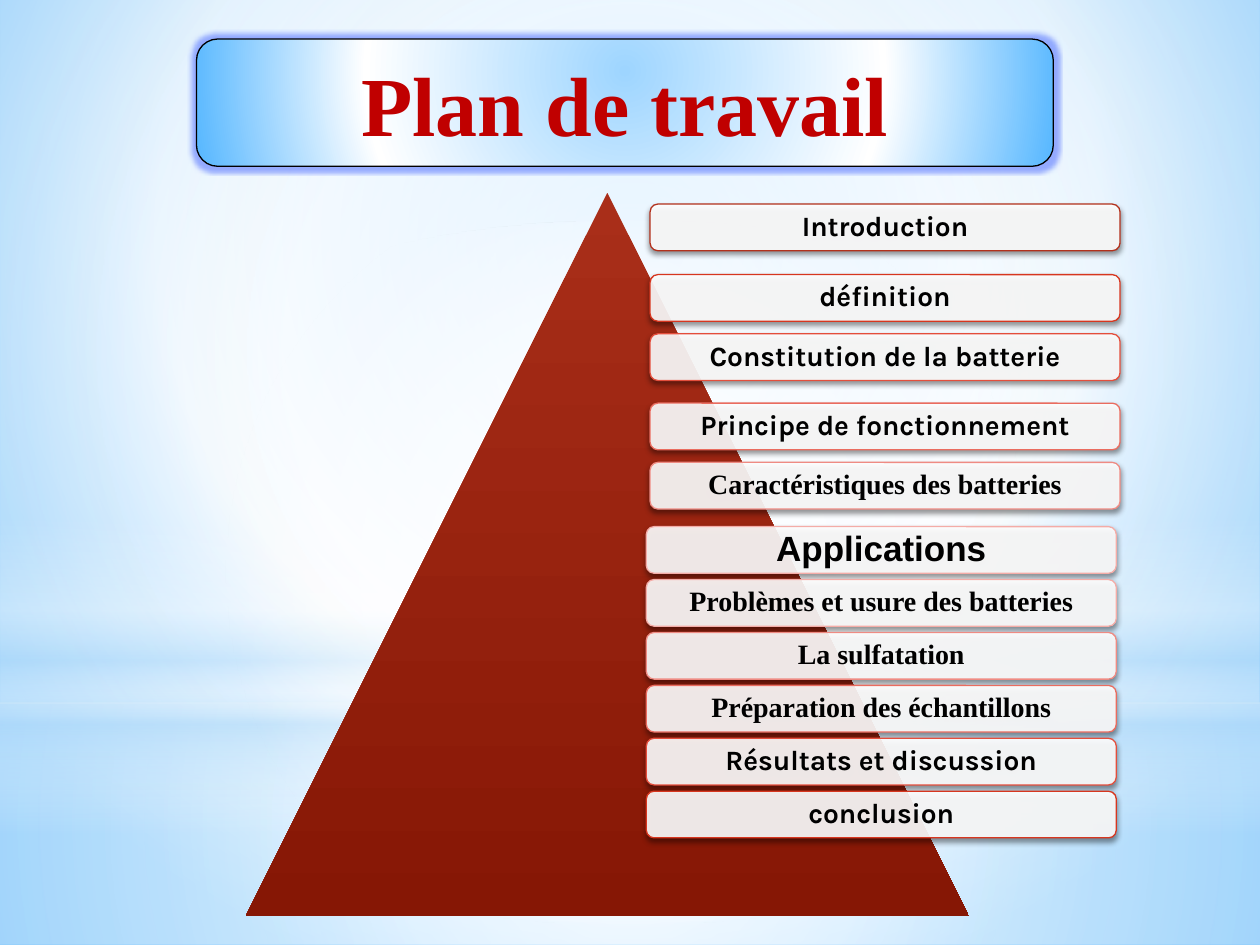
from lxml.etree import SubElement
from pptx import Presentation
from pptx.dml.color import RGBColor
from pptx.enum.shapes import MSO_SHAPE
from pptx.enum.text import MSO_ANCHOR, PP_ALIGN
from pptx.oxml.ns import qn
from pptx.util import Inches, Pt

BLACK = RGBColor(0x00, 0x00, 0x00)
WHITE = RGBColor(0xFF, 0xFF, 0xFF)
RED = RGBColor(0xC0, 0x00, 0x00)
GLOW = RGBColor(0x5A, 0x78, 0xFF)
SKY = RGBColor(0x9E, 0xD5, 0xFF)
BLUE = RGBColor(0x5B, 0xB9, 0xFF)
PALE = RGBColor(0xB4, 0xDC, 0xFA)
BRICK = RGBColor(0xA9, 0x2E, 0x19)
DARK = RGBColor(0x86, 0x17, 0x05)
EDGES = [RGBColor(0xB2, 0x30, 0x1B), RGBColor(0xD7, 0x36, 0x1F),
         RGBColor(0xE4, 0x4E, 0x3C), RGBColor(0xEA, 0x6C, 0x5F),
         RGBColor(0xEF, 0x8B, 0x83), RGBColor(0xF4, 0xAC, 0xA7)]

KARLA, TIMES, ARIAL = "Karla", "Times New Roman", "Arial"
MID = (50, 50, 50, 50)
HIGH = (20, 10, 20, 60)
SHEEN = [(0, SKY, 100), (60, WHITE, 100), (100, BLUE, 100)]

# Fill bands behind the content: shape, top, height, stops, focus (None = downward)
BANDS = [
    (MSO_SHAPE.RECTANGLE, 5.58, 1.92,
     [(0, WHITE, 91), (37, WHITE, 76), (100, PALE, 79)], MID),
    (MSO_SHAPE.RECTANGLE, 0, 5.58,
     [(0, WHITE, 89), (48, WHITE, 62), (100, PALE, 79)], MID),
    (MSO_SHAPE.RECTANGLE, 4.12, 2.5,
     [(0, WHITE, 0), (29, WHITE, 30), (45, PALE, 40), (55, WHITE, 26),
      (65, PALE, 60), (100, WHITE, 0)], None),
    (MSO_SHAPE.OVAL, 1.75, 5.58, [(0, WHITE, 100), (56, WHITE, 0)], MID),
]

# Text, top, font, for the two blocks of the plan
UPPER = [
    ("Introduction", 1.62, KARLA),
    ("définition", 2.18, KARLA),
    ("Constitution de la batterie", 2.65, KARLA),
    ("Principe de fonctionnement", 3.2, KARLA),
    ("Caractéristiques des batteries", 3.67, TIMES),
]
LOWER = [
    ("Applications", ARIAL),
    ("Problèmes et usure des batteries", TIMES),
    ("La sulfatation", TIMES),
    ("Préparation des échantillons", TIMES),
    ("Résultats et discussion", KARLA),
    ("conclusion", KARLA),
]


def add_tint(parent, color, alpha):
    tint = SubElement(parent, qn("a:srgbClr"), val=str(color))
    if alpha < 100:
        SubElement(tint, qn("a:alpha"), val=str(alpha * 1000))


def set_grad(fill, owner, stops, focus=None):
    """Gradient around a focus rectangle, or straight down without one."""
    fill.solid()
    old = owner.find(qn("a:solidFill"))
    grad = old.makeelement(qn("a:gradFill"), {"rotWithShape": "1"})
    owner.replace(old, grad)
    ramp = SubElement(grad, qn("a:gsLst"))
    for pos, color, alpha in stops:
        stop = SubElement(ramp, qn("a:gs"), pos=str(pos * 1000))
        add_tint(stop, color, alpha)
    if focus:
        route = SubElement(grad, qn("a:path"), {"path": "circle"})
        sides = {side: str(part * 1000) for side, part in zip("ltrb", focus)}
        SubElement(route, qn("a:fillToRect"), sides)
    else:
        SubElement(grad, qn("a:lin"), ang="5400000", scaled="0")


def add_shape(slide, kind, box, edge=None):
    shape = slide.shapes.add_shape(kind, *map(Inches, box))
    if edge is None:
        shape.line.fill.background()
    else:
        shape.line.color.rgb = edge
        shape.line.width = Pt(0.75)
    shape.shadow.inherit = False
    return shape


def add_effect(shape, tag, color, alpha, **sizes):
    effects = shape.element.spPr.find(qn("a:effectLst"))
    effect = SubElement(effects, qn(tag), {k: str(v) for k, v in sizes.items()})
    add_tint(effect, color, alpha)


def add_text(shape, text, font, size, color):
    frame = shape.text_frame
    frame.word_wrap = True
    frame.vertical_anchor = MSO_ANCHOR.MIDDLE
    para = frame.paragraphs[0]
    para.alignment = PP_ALIGN.CENTER
    run = para.add_run()
    run.text = text
    run.font.name = font
    run.font.size = Pt(size)
    run.font.bold = True
    run.font.color.rgb = color


def add_title(slide):
    shape = add_shape(slide, MSO_SHAPE.ROUNDED_RECTANGLE,
                      (1.56, 0.31, 6.8, 1.01), BLACK)
    set_grad(shape.fill, shape.element.spPr, SHEEN, HIGH)
    add_effect(shape, "a:glow", GLOW, 60, rad=Pt(5))
    add_text(shape, "Plan de travail", TIMES, 48, RED)


def add_item(slide, left, top, text, font, edge):
    shape = add_shape(slide, MSO_SHAPE.ROUNDED_RECTANGLE,
                      (left, top, 3.73, 0.37), edge)
    shape.fill.solid()
    shape.fill.fore_color.rgb = WHITE
    tint = shape.element.spPr.find(qn("a:solidFill"))[0]
    SubElement(tint, qn("a:alpha"), val="90000")
    add_effect(shape, "a:outerShdw", BLACK, 45, blurRad=Pt(3.1),
               dist=Pt(1.8), dir=5400000)
    add_text(shape, text, font, 20 if font == ARIAL else 16, BLACK)
    frame = shape.text_frame
    frame.margin_top = frame.margin_bottom = Inches(0.07)
    frame.paragraphs[0].line_spacing = 0.9


def main():
    deck = Presentation()
    deck.slide_width, deck.slide_height = Inches(10), Inches(7.5)
    slide = deck.slides.add_slide(deck.slide_layouts[6])

    back = slide.background.fill
    back.solid()
    set_grad(back, next(slide.element.iter(qn("p:bgPr"))), SHEEN, HIGH)
    for kind, top, height, stops, focus in BANDS:
        band = add_shape(slide, kind, (0, top, 10, height))
        set_grad(band.fill, band.element.spPr, stops, focus)

    add_title(slide)
    peak = add_shape(slide, MSO_SHAPE.ISOSCELES_TRIANGLE,
                     (1.95, 1.53, 5.74, 5.74))
    set_grad(peak.fill, peak.element.spPr, [(0, BRICK, 100), (100, DARK, 100)])

    for (text, top, font), edge in zip(UPPER, EDGES):
        add_item(slide, 5.16, top, text, font, edge)
    fade = EDGES[-1:] + EDGES[:0:-1]
    for row, ((text, font), edge) in enumerate(zip(LOWER, fade)):
        add_item(slide, 5.13, 4.18 + 0.42 * row, text, font, edge)

    deck.save("out.pptx")


if __name__ == "__main__":
    main()
